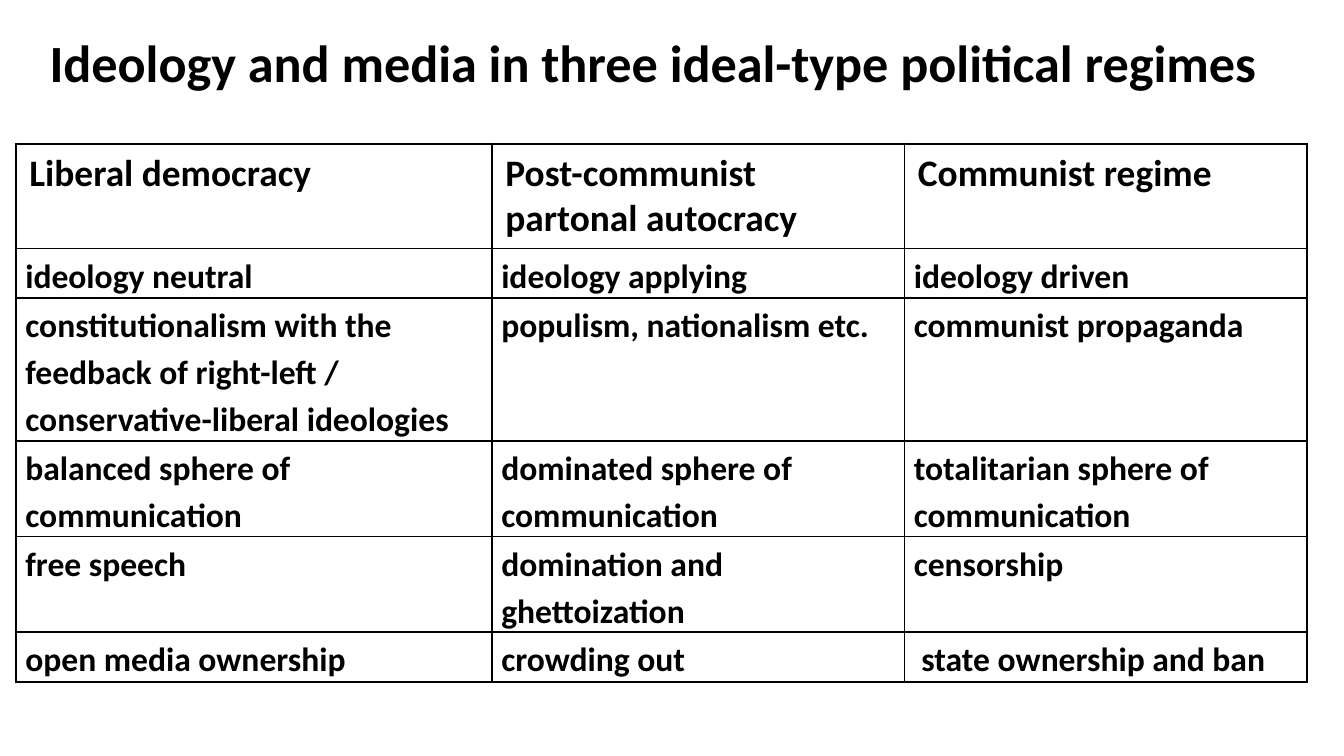
import pptx
import pptx.dml.color
import pptx.enum.text
import pptx.oxml
import pptx.oxml.ns
import pptx.util

Pt = pptx.util.Pt
COLOURS = {"ink": "000000", "page": "FFFFFF"}

TITLE = "Ideology and media in three ideal-type political regimes "
REGIMES = [
    ["Liberal democracy", "Post-communist partonal autocracy", "Communist regime"],
    ["ideology neutral", "ideology applying", "ideology driven"],
    ["constitutionalism with the feedback of right-left / conservative-liberal ideologies",
     "populism, nationalism etc.", "communist propaganda"],
    ["balanced sphere of communication", "dominated sphere of communication",
     "totalitarian sphere of communication"],
    ["free speech", "domination and ghettoization", "censorship"],
    ["open media ownership", "crowding out", " state ownership and ban"],
]
COLUMN_WIDTHS = [255, 221, 215.5]
ROW_HEIGHTS = [50.4, 26.6, 70.6, 44.6, 44, 26.6]


class SlideBuilder:
    """Holds the style and the current slide."""

    font = "Calibri"

    def __init__(self, page):
        self.page = page

    def colour(self, name):
        return pptx.dml.color.RGBColor.from_string(COLOURS[name])

    def format_text(self, para, size):
        for span in para.runs:
            span.font.name = self.font
            span.font.size = Pt(size)
            span.font.bold = True
            span.font.color.rgb = self.colour("ink")

    def background(self):
        fill = self.page.background.fill
        fill.solid()
        fill.fore_color.rgb = self.colour("page")

    def title(self, text, left, top, width, height, size):
        box = self.page.shapes.title
        box.left, box.top, box.width, box.height = map(Pt, (left, top, width, height))
        frame = box.text_frame
        frame.text = text
        frame.word_wrap = True
        frame.vertical_anchor = pptx.enum.text.MSO_ANCHOR.MIDDLE
        para = frame.paragraphs[0]
        para.alignment = pptx.enum.text.PP_ALIGN.CENTER
        self.format_text(para, size)

    def borders(self, cell, width):
        properties = cell._tc.get_or_add_tcPr()
        for position, side in enumerate(("lnL", "lnR", "lnT", "lnB")):
            line = pptx.oxml.parse_xml(
                f'<a:{side} {pptx.oxml.ns.nsdecls("a")} w="{Pt(width)}"><a:solidFill>'
                f'<a:srgbClr val="{COLOURS["ink"]}"/></a:solidFill></a:{side}>')
            properties.insert(position, line)

    def cell(self, cell, text, is_header):
        cell.text_frame.text = text
        para = cell.text_frame.paragraphs[0]
        self.format_text(para, 20 if is_header else 18)
        if not is_header:
            para.line_spacing = 1.15
            cell.margin_left = cell.margin_right = Pt(5)
            cell.margin_top, cell.margin_bottom = Pt(0.7), Pt(0)
        cell.fill.background()
        self.borders(cell, 1)

    def table(self, rows, left, top, widths, heights):
        frame = self.page.shapes.add_table(
            len(rows), len(widths), Pt(left), Pt(top), Pt(sum(widths)), Pt(sum(heights)))
        table = frame.table
        table.horz_banding = False
        for column, width in zip(table.columns, widths):
            column.width = Pt(width)
        for row, height in zip(table.rows, heights):
            row.height = Pt(height)
        for row_index, texts in enumerate(rows):
            for column_index, text in enumerate(texts):
                self.cell(table.cell(row_index, column_index), text, row_index == 0)


def main():
    deck = pptx.Presentation()
    deck.slide_width, deck.slide_height = Pt(720), Pt(405)
    title_only = deck.slide_layouts[5]
    builder = SlideBuilder(deck.slides.add_slide(title_only))
    builder.background()

    # Title
    builder.title(TITLE, 10.8, -0.7, 684, 67, 28)

    # Comparison of regimes
    builder.table(REGIMES, 8.6, 77, COLUMN_WIDTHS, ROW_HEIGHTS)

    deck.save("out.pptx")


if __name__ == "__main__":
    main()
